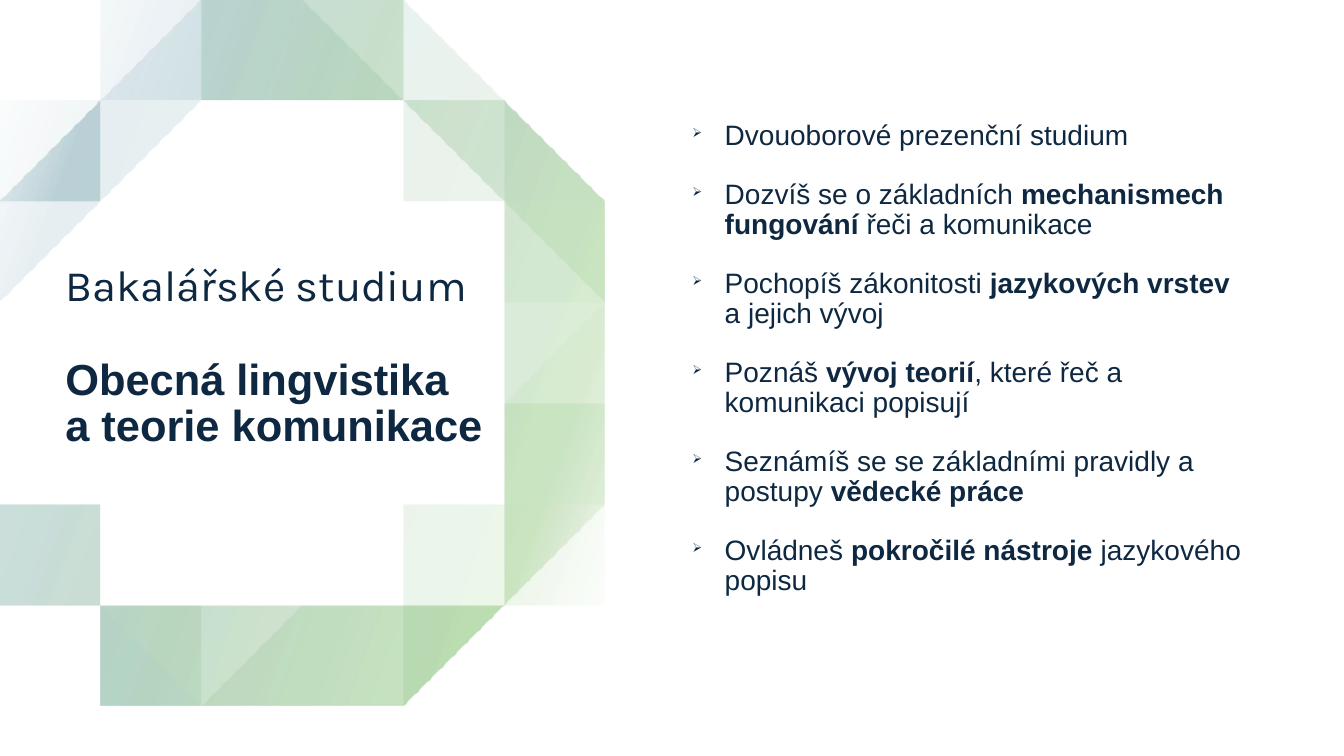
"""Build a slide about a bachelor's programme with a ring of layered bands beside a bullet list."""
import lxml.etree
import pptx
import pptx.dml.color
import pptx.enum.shapes
import pptx.enum.text
import pptx.oxml
import pptx.oxml.ns
import pptx.util

Inches, Pt = pptx.util.Inches, pptx.util.Pt
NAVY, GREEN, BLUE, WHITE = "0E2841", "4EA72E", "156082", "FFFFFF"


def color(value):
    return pptx.dml.color.RGBColor.from_string(value)


def smooth(anchors):
    """Return the anchors with the Catmull-Rom midpoint added between neighbours."""
    padded = [anchors[0], *anchors, anchors[-1]]
    points = []
    for a, b, c, d in zip(padded, padded[1:], padded[2:], padded[3:]):
        points.append(b)
        points.append(tuple((9 * (q + r) - p - s) / 16 for p, q, r, s in zip(a, b, c, d)))
    return points + [anchors[-1]]


deck = pptx.Presentation()
deck.slide_width, deck.slide_height = Inches(13.33), Inches(7.5)
page = deck.slides.add_slide(deck.slide_layouts[6])

backdrop = page.shapes.add_shape(
    pptx.enum.shapes.MSO_SHAPE.RECTANGLE, 0, 0, deck.slide_width, deck.slide_height)
backdrop.shadow.inherit = False
backdrop.fill.solid()
backdrop.fill.fore_color.rgb = color(WHITE)
backdrop.line.fill.background()

wavy_outer = [
    (-0.01, 1.85), (0.6, 1.2), (1.08, 0.76), (1.65, 0.39), (2.33, 0.16), (3.04, 0.14),
    (3.72, 0.29), (4.33, 0.6), (4.88, 1.1), (5.46, 1.78), (5.93, 2.64), (6.04, 3.3),
    (5.93, 3.97), (5.65, 4.82), (5.44, 5.44), (5.04, 5.98), (4.42, 6.52), (3.65, 6.86),
    (2.83, 6.96), (2.01, 6.85), (1.1, 6.5), (0.42, 6.05), (-0.01, 5.62)]
wavy_inner = [
    (-0.01, 5.04), (0.33, 5.5), (0.75, 5.91), (1.24, 6.22), (1.94, 6.46), (2.67, 6.5),
    (3.52, 6.38), (4.19, 6.14), (4.66, 5.82), (5.1, 5.28), (5.34, 4.43), (5.53, 3.83),
    (5.63, 3.3), (5.55, 2.75), (5.16, 1.99), (4.66, 1.46), (4.03, 1.09), (3.52, 0.89),
    (2.78, 0.79), (1.96, 0.98), (1.49, 1.27), (0.81, 1.85), (-0.01, 2.5)]
pebble_outer = [
    (-0.01, 1.93), (0.55, 1.4), (1.54, 0.56), (2.78, 0.19), (4.17, 0.54), (5.25, 1.43),
    (5.91, 2.53), (5.91, 3.87), (5.53, 5.15), (5.02, 5.98), (3.99, 6.68), (2.7, 6.9),
    (1.36, 6.63), (0.77, 6.31), (-0.01, 5.59)]
narrow_inner = [
    (-0.01, 4.35), (0.33, 5.03), (0.69, 5.46), (1.61, 6.07), (2.7, 6.28), (3.76, 6.11),
    (4.59, 5.55), (4.87, 5.18), (5.01, 4.73), (5.34, 3.66), (5.41, 3.2), (5.33, 2.73),
    (4.78, 1.84), (3.88, 1.08), (3.35, 0.87), (2.78, 0.81), (1.86, 1.08), (0.98, 1.84),
    (-0.01, 2.85)]
wide_inner = [
    (-0.01, 3.84), (0.17, 4.49), (0.77, 5.37), (1.66, 5.96), (2.71, 6.16), (3.71, 5.99),
    (4.5, 5.46), (4.76, 5.13), (4.89, 4.7), (5.22, 3.62), (5.21, 2.77), (4.69, 1.92),
    (3.82, 1.18), (2.78, 0.93), (1.9, 1.21), (1.07, 1.92), (0.69, 2.29), (0.12, 2.88),
    (-0.01, 3.14)]
round_outer = [
    (-0.01, 1.18), (1.26, 0.27), (2.62, 0), (3.98, 0.27), (5.13, 1.03), (5.9, 2.18),
    (6.17, 3.54), (5.9, 4.9), (5.13, 6.05), (3.98, 6.82), (2.62, 7.09), (1.26, 6.82),
    (-0.01, 5.91)]
round_inner = [
    (-0.01, 5.45), (0.64, 6.09), (1.19, 6.42), (1.86, 6.65), (2.72, 6.74), (3.65, 6.63),
    (4.23, 6.42), (4.83, 6.05), (5.23, 5.67), (5.53, 5.11), (5.93, 3.86), (6.04, 3.23),
    (5.91, 2.6), (5.62, 2.03), (5.21, 1.54), (4.74, 1.11), (4.23, 0.76), (3.67, 0.51),
    (2.76, 0.39), (1.89, 0.61), (1.37, 0.93), (0.77, 1.46), (-0.01, 2.18)]

bands = [
    (wavy_outer, wavy_inner, 1, [(37, GREEN), (85, BLUE), (100, WHITE)]),
    (pebble_outer, narrow_inner, 1.02, [(2, WHITE), (54, GREEN), (100, WHITE)]),
    (pebble_outer, wide_inner, 1, [(2, WHITE), (16, GREEN), (85, BLUE), (100, WHITE)]),
    (pebble_outer, narrow_inner, 1, [(2, WHITE), (16, GREEN), (85, BLUE), (100, WHITE)]),
    (round_outer, round_inner, 1, [(2, WHITE), (16, GREEN), (74, BLUE), (100, WHITE)]),
]
ring = page.shapes.add_group_shape()
for outer, inner, stretch, stops in bands:
    outline = [(x * stretch, y) for x, y in smooth(outer) + smooth(inner)]
    builder = ring.shapes.build_freeform(*outline[0], scale=Inches(1))
    builder.add_line_segments(outline[1:], close=True)
    band = builder.convert_to_shape()
    band.shadow.inherit = False
    band.line.fill.background()
    band.fill.background()
    stop_xml = "".join(
        f'<a:gs pos="{place * 1000}"><a:srgbClr val="{tint}"><a:alpha val="10000"/></a:srgbClr></a:gs>'
        for place, tint in stops)
    gradient = pptx.oxml.parse_xml(
        f'<a:gradFill {pptx.oxml.ns.nsdecls("a")} rotWithShape="1"><a:gsLst>{stop_xml}</a:gsLst>'
        f'<a:lin ang="{200 * 60000}" scaled="0"/></a:gradFill>')
    properties = band._element.spPr
    properties.replace(properties.find(pptx.oxml.ns.qn("a:noFill")), gradient)

title = page.shapes.add_textbox(Inches(0.55), Inches(2.04), Inches(4.37), Inches(3.02))
title.text_frame.text = "Bakalářské studium\nObecná lingvistika \va teorie komunikace"
title.text_frame.paragraphs[1].space_before = Pt(33)
for para, font_name, bold in zip(title.text_frame.paragraphs, ("Karla", "Arial"), (False, True)):
    para.line_spacing = 0.9
    for span in para.runs:
        span.font.name, span.font.size, span.font.bold = font_name, Pt(31), bold
        span.font.color.rgb = color(NAVY)

points = [
    ("Dvouoborové prezenční studium",),
    ("Dozvíš se o základních ", "mechanismech fungování", " řeči a komunikace"),
    ("Pochopíš zákonitosti", " jazykových vrstev", " a jejich vývoj"),
    ("Poznáš ", "vývoj teorií", ", které řeč a komunikaci popisují"),
    ("Seznámíš se se základními pravidly a postupy ", "vědecké práce"),
    ("Ovládneš ", "pokročilé nástroje", " jazykového popisu"),
]
body = page.shapes.add_textbox(Inches(6.66), Inches(0.88), Inches(5.8), Inches(5.72))
body.text_frame.margin_bottom = Inches(0.41)
for index, pieces in enumerate(points):
    para = body.text_frame.add_paragraph() if index else body.text_frame.paragraphs[0]
    para.line_spacing, para.space_before, para.space_after = 0.9, Pt(10), Pt(10.4)
    settings = para._p.get_or_add_pPr()
    settings.set("marL", str(Inches(0.43)))
    settings.set("indent", str(Inches(-0.32)))
    for tag, attribute, value in (("a:buSzPct", "val", "45000"), ("a:buChar", "char", "➢")):
        lxml.etree.SubElement(settings, pptx.oxml.ns.qn(tag)).set(attribute, value)
    for position, piece in enumerate(pieces):
        span = para.add_run()
        span.text = piece
        span.font.name, span.font.size, span.font.bold = "Arial", Pt(20), position == 1
        span.font.color.rgb = color(NAVY)

for box in (title, body):
    box.text_frame.word_wrap = True
    box.text_frame.vertical_anchor = pptx.enum.text.MSO_ANCHOR.MIDDLE

deck.save("out.pptx")
